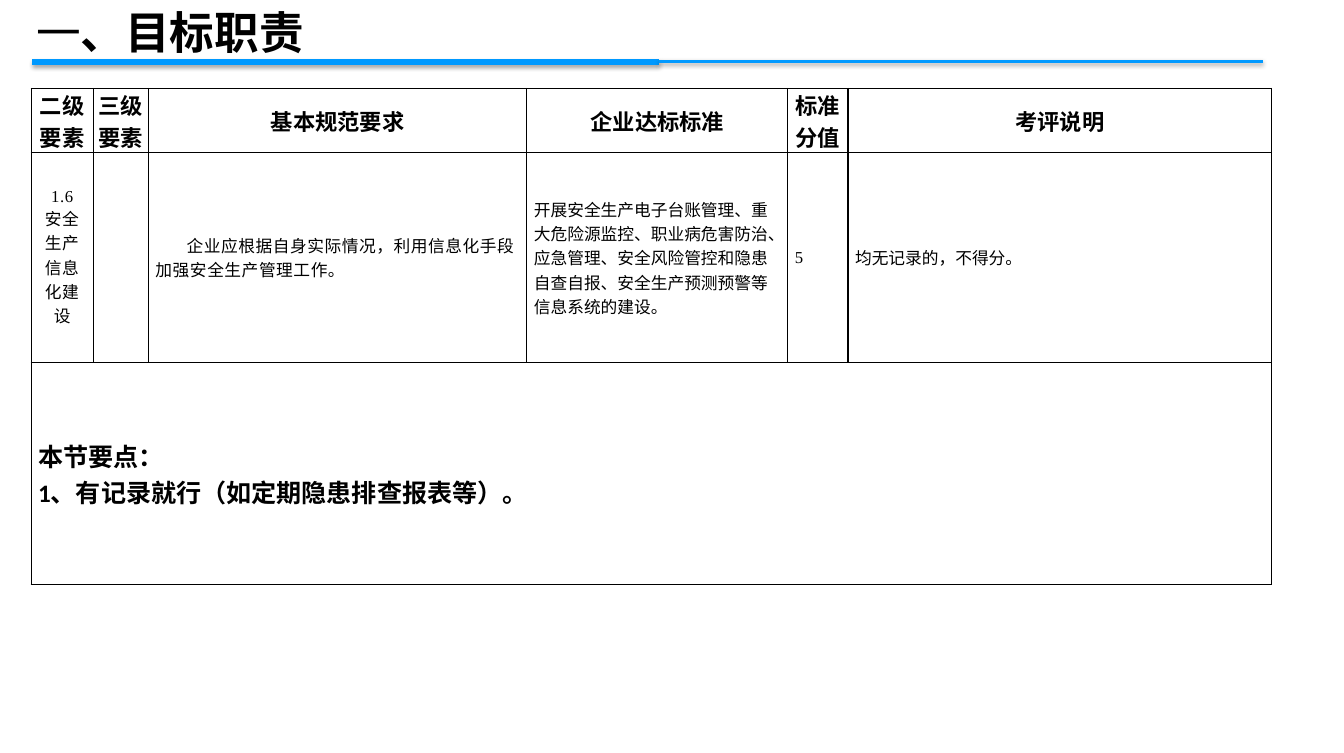
from dataclasses import dataclass

from lxml.etree import SubElement
from pptx import Presentation
from pptx.dml.color import RGBColor
from pptx.enum.shapes import MSO_CONNECTOR
from pptx.enum.text import MSO_ANCHOR, MSO_AUTO_SIZE, PP_ALIGN
from pptx.oxml.ns import qn
from pptx.util import Pt

PX = 9144  # EMU; 100 px to the inch
BLACK, BLUE = "000000", "0099FF"
CJK, SERIF, SANS = "Noto Sans CJK SC", "Times New Roman", "Calibri"
COLUMN_WIDTHS = (62, 55, 377, 260, 60, 422)
ROW_HEIGHTS = (51, 209, 221)


@dataclass(frozen=True)
class TextStyle:
    size: int
    font: str = SERIF
    bold: bool = False
    spacing: int = 0  # hundredths of a point
    centred: bool = False
    indent: int = 0
    inset: int = 7


@dataclass(frozen=True)
class Entry:
    text: str
    style: TextStyle


@dataclass(frozen=True)
class Rule:
    start: int
    end: int
    y: int
    weight: int
    shadow_blur: float
    shadow_distance: float
    shadow_opacity: int


HEADING = TextStyle(16, bold=True, centred=True, inset=4)
ELEMENT = TextStyle(12, spacing=40, centred=True)
REQUIREMENT = TextStyle(12, spacing=40, indent=31)
BODY = TextStyle(12)
KEY_POINTS = TextStyle(18, SANS, bold=True)
TITLE_LIGHT = TextStyle(32, CJK)
TITLE_BOLD = TextStyle(32, CJK, bold=True)

ENTRIES = (
    tuple(Entry(text, HEADING) for text in (
        "二级\n要素", "三级\n要素", "基本规范要求", "企业达标标准", "标准\n分值", "考评说明")),
    (
        Entry("1.6\n安全生产信息化建设", ELEMENT),
        Entry("", BODY),
        Entry("企业应根据自身实际情况，利用信息化手段加强安全生产管理工作。", REQUIREMENT),
        Entry("开展安全生产电子台账管理、重大危险源监控、职业病危害防治、应急管理、"
              "安全风险管控和隐患自查自报、安全生产预测预警等信息系统的建设。", BODY),
        Entry("5", BODY),
        Entry("均无记录的，不得分。", BODY),
    ),
    (Entry("本节要点：\n1、有记录就行（如定期隐患排查报表等）。", KEY_POINTS),),
)

RULES = (
    Rule(32, 657, 62, 4, 3.1, 1.8, 35),
    Rule(657, 1258, 61, 2, 3.1, 1.6, 38),
)


def rgb(colour: str) -> RGBColor:
    return RGBColor.from_string(colour)


def format_run(run, style: TextStyle) -> None:
    run.font.size = Pt(style.size)
    run.font.bold = style.bold
    run.font.color.rgb = rgb(BLACK)
    run.font.name = style.font
    properties = run.font._element
    properties.set("spc", str(style.spacing))
    SubElement(properties, qn("a:ea")).set("typeface", CJK)


def draw_rule(slide, rule: Rule) -> None:
    line = slide.shapes.add_connector(
        MSO_CONNECTOR.STRAIGHT, rule.start * PX, rule.y * PX, rule.end * PX, rule.y * PX)
    line.line.color.rgb = rgb(BLUE)
    line.line.width = Pt(rule.weight)
    effects = SubElement(line._element.spPr, qn("a:effectLst"))
    shadow = SubElement(
        effects, qn("a:outerShdw"), blurRad=str(Pt(rule.shadow_blur)),
        dist=str(Pt(rule.shadow_distance)), dir="5400000", rotWithShape="0")
    shade = SubElement(shadow, qn("a:srgbClr"), val=BLACK)
    SubElement(shade, qn("a:alpha"), val=str(rule.shadow_opacity * 1000))


def format_cell(cell) -> None:
    """Give the cell black borders and no fill."""
    properties = cell._tc.get_or_add_tcPr()
    for side in ("lnL", "lnR", "lnT", "lnB"):
        border = SubElement(properties, qn(f"a:{side}"), w=str(Pt(1)))
        SubElement(SubElement(border, qn("a:solidFill")), qn("a:srgbClr"), val=BLACK)
    cell.fill.background()


def write_entry(cell, entry: Entry) -> None:
    style = entry.style
    cell.vertical_anchor = MSO_ANCHOR.MIDDLE
    cell.margin_left = cell.margin_right = style.inset * PX
    cell.margin_top = cell.margin_bottom = 0
    cell.text_frame.text = entry.text
    for paragraph in cell.text_frame.paragraphs:
        paragraph.alignment = PP_ALIGN.CENTER if style.centred else PP_ALIGN.LEFT
        if style.indent:
            paragraph._p.get_or_add_pPr().set("indent", str(style.indent * PX))
        for run in paragraph.runs:
            format_run(run, style)


def draw_standards(slide) -> None:
    standards = slide.shapes.add_table(
        len(ROW_HEIGHTS), len(COLUMN_WIDTHS), 31 * PX, 88 * PX,
        sum(COLUMN_WIDTHS) * PX, sum(ROW_HEIGHTS) * PX).table
    standards.first_row = standards.horz_banding = False
    for column, width in zip(standards.columns, COLUMN_WIDTHS):
        column.width = width * PX
    for row, height in zip(standards.rows, ROW_HEIGHTS):
        row.height = height * PX
    for cell in standards.iter_cells():
        format_cell(cell)
    last = len(ROW_HEIGHTS) - 1
    standards.cell(last, 0).merge(standards.cell(last, len(COLUMN_WIDTHS) - 1))
    for row_index, row_entries in enumerate(ENTRIES):
        for column_index, entry in enumerate(row_entries):
            write_entry(standards.cell(row_index, column_index), entry)


def draw_title(slide) -> None:
    frame = slide.shapes.add_textbox(-39 * PX, 0, 417 * PX, 64 * PX).text_frame
    frame.word_wrap = True
    frame.auto_size = MSO_AUTO_SIZE.SHAPE_TO_FIT_TEXT
    heading = frame.paragraphs[0]
    heading.alignment = PP_ALIGN.CENTER
    for entry in (Entry("一", TITLE_LIGHT), Entry("、目标职责", TITLE_BOLD)):
        run = heading.add_run()
        run.text = entry.text
        format_run(run, entry.style)


def main() -> None:
    deck = Presentation()
    deck.slide_width, deck.slide_height = 1339 * PX, 750 * PX
    slide = deck.slides.add_slide(deck.slide_layouts[6])
    for rule in RULES:
        draw_rule(slide, rule)
    draw_standards(slide)
    draw_title(slide)
    deck.save("out.pptx")


if __name__ == "__main__":
    main()
